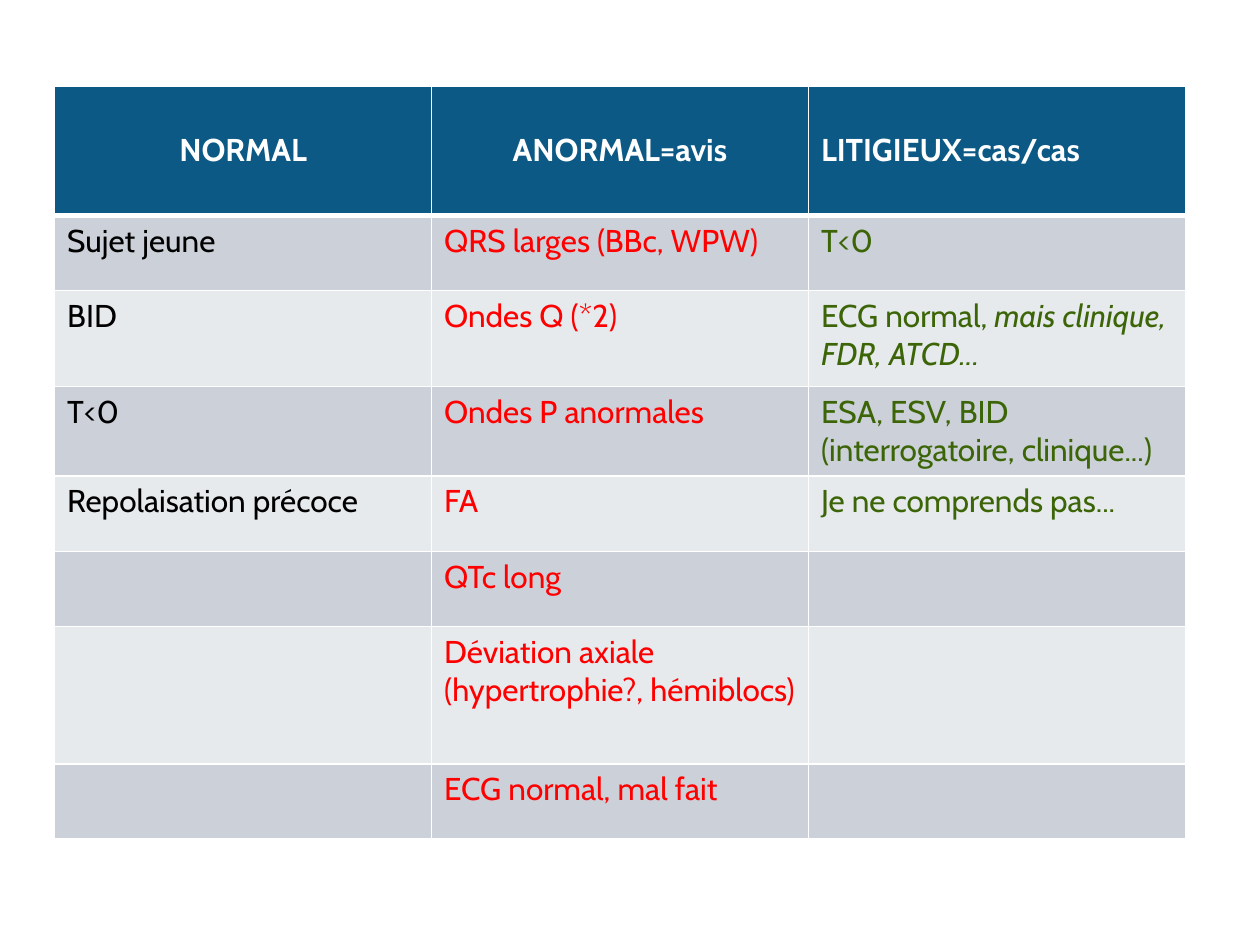
from lxml import etree
from pptx import Presentation
from pptx.dml.color import RGBColor
from pptx.enum import text as t
from pptx.oxml import ns
from pptx.util import Pt


def tint(code):
    return RGBColor.from_string(code)


def write(para, words, size=18, font="Cabin", color="000000",
          bold=False, italic=False, align=t.PP_ALIGN.LEFT):
    para.alignment = align
    run = para.add_run()
    run.text = words
    run.font.size = Pt(size)
    run.font.name = font
    run.font.bold = bold
    run.font.italic = italic
    run.font.color.rgb = tint(color)


class Deck:
    head = "0C5986"
    bands = ("CCD1D9", "E7EAED")
    inks = ("000000", "FF0000", "3C6507")
    line = "FFFFFF"

    def __init__(self, wide, high):
        self.file = Presentation()
        self.file.slide_width = Pt(wide)
        self.file.slide_height = Pt(high)
        self.slide = self.file.slides.add_slide(self.file.slide_layouts[6])

    def border(self, cell, **sides):
        props = cell._tc.get_or_add_tcPr()
        for spot, side in enumerate("LRTB"):
            edge = etree.Element(ns.qn("a:ln" + side), w=str(Pt(sides.get(side, 1))))
            fill = etree.SubElement(edge, ns.qn("a:solidFill"))
            etree.SubElement(fill, ns.qn("a:srgbClr"), val=self.line)
            props.insert(spot, edge)

    def paint(self, cell, code):
        cell.fill.solid()
        cell.fill.fore_color.rgb = tint(code)

    def table(self, left, top, width, heads, rows, highs):
        grid = self.slide.shapes.add_table(
            len(highs), len(heads), Pt(left), Pt(top),
            Pt(width * len(heads)), Pt(sum(highs))).table
        for col in grid.columns:
            col.width = Pt(width)
        for row, high in zip(grid.rows, highs):
            row.height = Pt(high)
        for num, (words, align) in enumerate(heads):
            cell = grid.cell(0, num)
            self.paint(cell, self.head)
            self.border(cell, B=3)
            cell.vertical_anchor = t.MSO_ANCHOR.MIDDLE
            write(cell.text_frame.paragraphs[0], words,
                  color=self.line, bold=True, align=align)
        for at, row in enumerate(rows):
            for num, (parts, ink) in enumerate(zip(row, self.inks)):
                cell = grid.cell(at + 1, num)
                self.paint(cell, self.bands[at % 2])
                self.border(cell, T=1 if at else 3)
                if isinstance(parts, str):
                    parts = (parts,)
                for spot, words in enumerate(parts):
                    if words:
                        write(cell.text_frame.paragraphs[0], words,
                              color=ink, italic=spot > 0)


def main():
    deck = Deck(720, 540)
    mid, left = t.PP_ALIGN.CENTER, t.PP_ALIGN.LEFT
    heads = [("NORMAL", mid), ("ANORMAL=avis", mid), ("LITIGIEUX=cas/cas", left)]
    rows = [
        ("Sujet jeune", "QRS larges (BBc, WPW)", "T<0"),
        ("BID", "Ondes Q (*2)", ("ECG normal, ", "mais clinique, FDR, ATCD...")),
        ("T<0", "Ondes P anormales", "ESA, ESV, BID (interrogatoire, clinique...)"),
        ("Repolaisation précoce", "FA", "Je ne comprends pas..."),
        ("", "QTc long", ""),
        ("", "Déviation axiale (hypertrophie?, hémiblocs)", ""),
        ("", "ECG normal, mal fait", ""),
    ]
    highs = [74, 43, 55, 43, 43, 43, 78.5, 43]
    deck.table(31.2, 49, 215.4, heads, rows, highs)
    deck.file.save("out.pptx")


if __name__ == "__main__":
    main()
